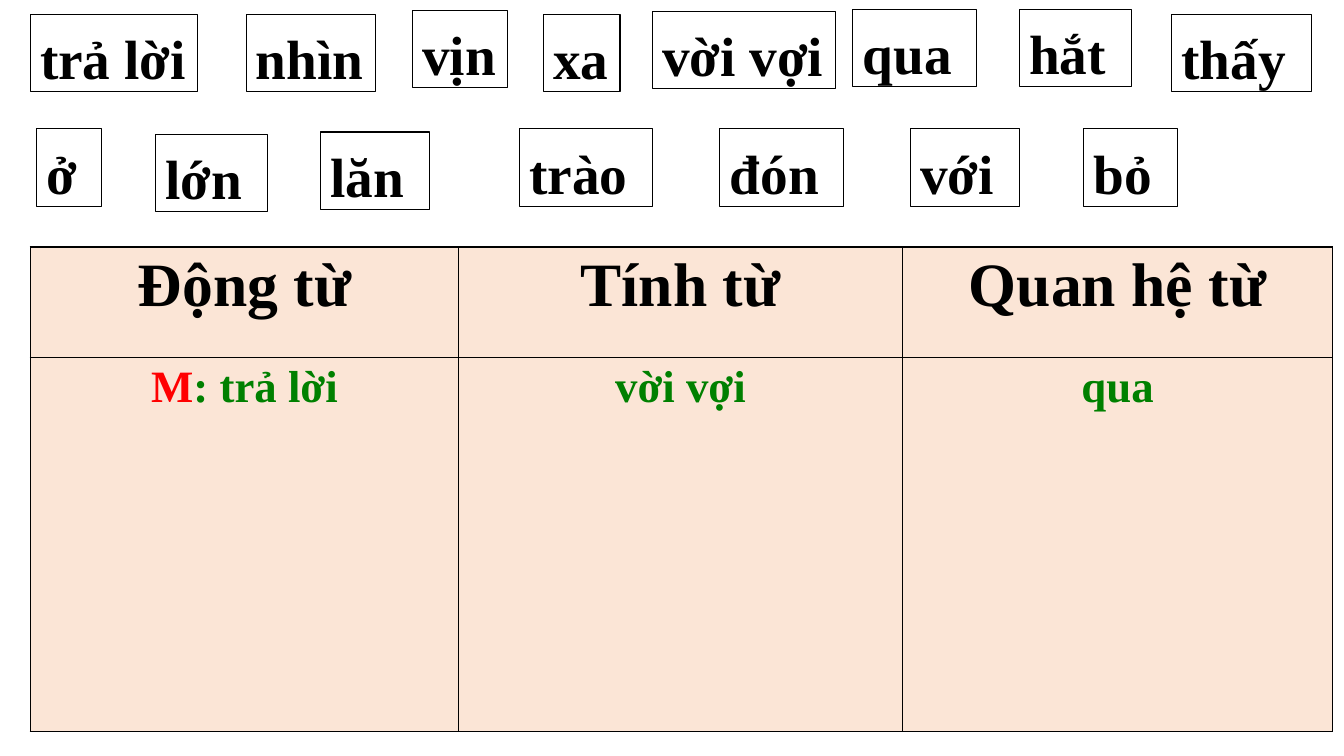
from lxml.etree import SubElement
from pptx import Presentation
from pptx.dml.color import RGBColor
from pptx.enum.text import PP_ALIGN
from pptx.oxml.ns import qn
from pptx.util import Inches, Pt

FONT = "Times New Roman"
BLACK, RED, GREEN, PEACH = "000000", "FF0000", "008000", "FBE5D6"

# Word, left, top, width
WORD_CARDS = [
    ("trả lời", 0.3, 0.14, 1.66),
    ("nhìn", 2.44, 0.14, 1.28),
    ("vịn", 4.09, 0.1, 0.94),
    ("xa", 5.39, 0.14, 0.76),
    ("vời vợi", 6.47, 0.11, 1.82),
    ("qua", 8.46, 0.09, 1.23),
    ("hắt", 10.11, 0.09, 1.11),
    ("thấy", 11.62, 0.14, 1.39),
    ("ở", 0.36, 1.28, 0.65),
    ("lớn", 1.54, 1.33, 1.11),
    ("lăn", 3.18, 1.31, 1.08),
    ("trào", 5.15, 1.28, 1.32),
    ("đón", 7.14, 1.28, 1.23),
    ("với", 9.03, 1.28, 1.08),
    ("bỏ", 10.75, 1.28, 0.93),
]
CARD_HEIGHT = 0.77
CARD_FRAME = {
    "word_wrap": True,
    "margin_left": Inches(0.1),
    "margin_top": Inches(0.1),
    "margin_right": 0,
    "margin_bottom": 0,
}

TABLE_LEFT, TABLE_TOP = 0.3, 2.45
COLUMN_WIDTHS = [4.25, 4.4, 4.27]
ROW_HEIGHTS = [1.1, 3.71]
ROW_SIZES = [44, 32]
# Each cell is a list of (text, colour) runs
TABLE_ROWS = [
    [[("Động từ", BLACK)], [("Tính từ", BLACK)], [("Quan hệ từ", BLACK)]],
    [[("M", RED), (": trả lời", GREEN)], [("vời vợi", GREEN)], [("qua", GREEN)]],
]
CELL_FORMAT = {
    "margin_left": Inches(0.13),
    "margin_right": Inches(0.13),
    "margin_top": Inches(0.05),
    "margin_bottom": Inches(0.05),
}


def colour(hex_value):
    return RGBColor.from_string(hex_value)


def set_attributes(target, values):
    for name, value in values.items():
        setattr(target, name, value)


def add_run(paragraph, text, size, hex_value):
    run = paragraph.add_run()
    run.text = text
    set_attributes(run.font, {"name": FONT, "size": Pt(size), "bold": True})
    run.font.color.rgb = colour(hex_value)


def add_borders(cell):
    """Draw a one-point black line on each side; call before filling the cell."""
    properties = cell._tc.get_or_add_tcPr()
    for side in ("a:lnL", "a:lnR", "a:lnT", "a:lnB"):
        line = SubElement(properties, qn(side), w=str(Pt(1)))
        fill = SubElement(line, qn("a:solidFill"))
        SubElement(fill, qn("a:srgbClr"), val=BLACK)


def add_word_card(slide, word, left, top, width):
    card = slide.shapes.add_textbox(
        Inches(left), Inches(top), Inches(width), Inches(CARD_HEIGHT))
    card.line.color.rgb = colour(BLACK)
    card.line.width = Pt(0.75)
    set_attributes(card.text_frame, CARD_FRAME)
    add_run(card.text_frame.paragraphs[0], word, 39.5, BLACK)


def add_word_class_table(slide):
    table = slide.shapes.add_table(
        len(ROW_HEIGHTS), len(COLUMN_WIDTHS), Inches(TABLE_LEFT), Inches(TABLE_TOP),
        Inches(sum(COLUMN_WIDTHS)), Inches(sum(ROW_HEIGHTS))).table
    set_attributes(table, {"first_row": False, "horz_banding": False})
    for column, width in zip(table.columns, COLUMN_WIDTHS):
        column.width = Inches(width)
    for row, height, size, contents in zip(table.rows, ROW_HEIGHTS, ROW_SIZES, TABLE_ROWS):
        row.height = Inches(height)
        for cell, runs in zip(row.cells, contents):
            add_borders(cell)
            cell.fill.solid()
            cell.fill.fore_color.rgb = colour(PEACH)
            set_attributes(cell, CELL_FORMAT)
            paragraph = cell.text_frame.paragraphs[0]
            paragraph.alignment = PP_ALIGN.CENTER
            for text, hex_value in runs:
                add_run(paragraph, text, size, hex_value)


def main():
    presentation = Presentation()
    presentation.slide_width = Inches(13.33)
    presentation.slide_height = Inches(7.5)
    slide = presentation.slides.add_slide(presentation.slide_layouts[6])
    add_word_class_table(slide)
    for card in WORD_CARDS:
        add_word_card(slide, *card)
    presentation.save("out.pptx")


if __name__ == "__main__":
    main()
